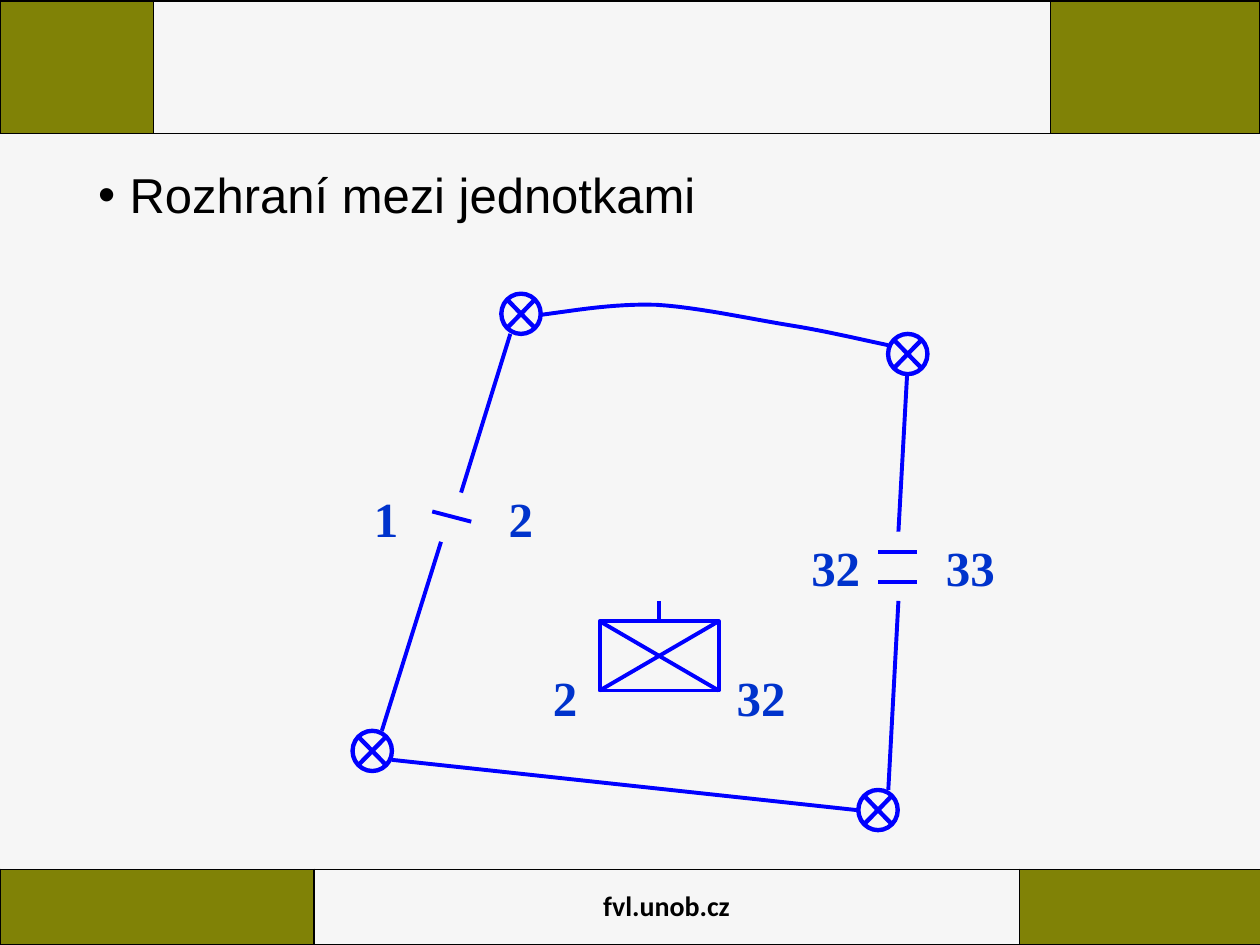
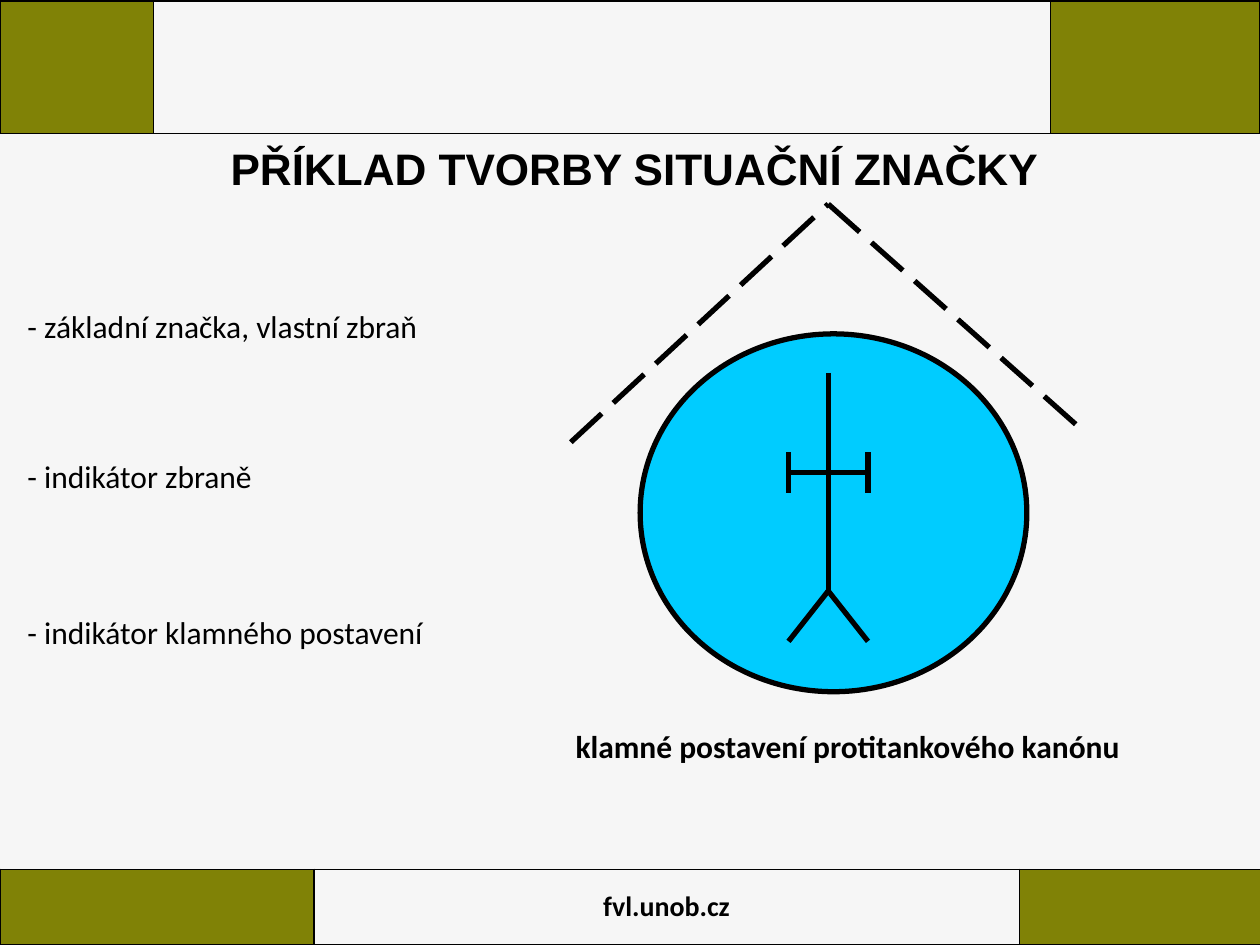
"""Builds two slides on tactical map symbols: unit boundaries and a worked example."""
from lxml.etree import SubElement
from pptx import Presentation
from pptx.dml.color import RGBColor
from pptx.enum.dml import MSO_LINE
from pptx.enum.shapes import MSO_CONNECTOR, MSO_SHAPE
from pptx.enum.text import MSO_ANCHOR as Anchor, PP_ALIGN as Align
from pptx.oxml.ns import qn
from pptx.util import Pt

PAPER = RGBColor(0xF6, 0xF6, 0xF6)
OLIVE = RGBColor(0x80, 0x82, 0x06)
BLACK = RGBColor(0, 0, 0)
BLUE = RGBColor(0, 0, 0xFF)
LABEL_BLUE = RGBColor(0, 0x33, 0xCC)
SKY = RGBColor(0, 0xCC, 0xFF)

HEADER = dict(top=0.7, height=75.6, widths=(87.8, 512.6, 119.6))
FOOTER = dict(top=496.8, height=43.2, widths=(179.3, 403.2, 138.2), caption="fvl.unob.cz")

BOUNDARY_TOPIC = "Rozhraní mezi jednotkami"
JUNCTION_SIZE = (22.5, 23)
JUNCTIONS = [(286.5, 167.8), (507.5, 190.8), (201.5, 417.6), (490.5, 451.4)]
FRONT_START = (308.9, 180)
FRONT_CURVES = [
    ((330.5, 177.1), (351.4, 173.5), (375.1, 174.2)),
    ((398.9, 175.7), (428.4, 182.2), (450.7, 185.8)),
    ((473, 189.4), (490.3, 193.7), (507.6, 197.3)),
]
BOUNDARY_LINES = [
    (263.5, 281.5, 291.6, 190.8), (513.4, 303.8, 518.4, 213.1),
    (223.9, 434.2, 490.3, 463), (218.2, 417.6, 252, 309.6),
    (507.6, 451.4, 513.4, 343.4),
]
ECHELON_MARKS = [
    (247, 292.3, 269.3, 298.1), (501.8, 332.6, 524.2, 332.6),
    (501.8, 315.4, 524.2, 315.4),
]
UNIT_LABELS = [
    ("1\t2", (206.6, 275.8, 118.8, 41), 77),
    ("32\t33", (456.5, 303.8, 136.1, 41), 77),
    ("2\t32", (308.9, 378, 158.4, 41), 105),
]
UNIT_BOX = (342.7, 355, 68, 39.6)
ECHELON_TICK = 11.5

EXAMPLE_TITLE = "PŘÍKLAD TVORBY SITUAČNÍ ZNAČKY "
STEPS = [
    ("- základní značka, vlastní zbraň", 172.1),
    ("- indikátor zbraně", 257.8),
    ("- indikátor klamného postavení", 347),
]
SYMBOL_NAME = " klamné postavení protitankového kanónu"
WEAPON_DISC = (365.8, 190.8, 221, 204.5)
GUN_X, GUN_TOP, GUN_FORK, GUN_FOOT = 473.3, 213.1, 337.7, 366.5
AXLE_Y, AXLE_REACH, WHEEL_REACH = 270, 22.7, 11.5
DECOY_ROOF = [(326.2, 252.7, 473.3, 116.6), (473.3, 116.6, 620.6, 247.7)]


def points(*lengths):
    return [Pt(length) for length in lengths]


def write(frame, text, size=18, font="Calibri", color=BLACK, bold=False,
          align=Align.LEFT, anchor=Anchor.TOP, spacing=None, bullet=None, tab=None):
    frame.word_wrap = True
    frame.vertical_anchor = anchor
    paragraph = frame.paragraphs[0]
    paragraph.text = text
    paragraph.alignment = align
    if spacing:
        paragraph.line_spacing = spacing
    props = paragraph._p.get_or_add_pPr()
    if bullet:
        props.set("marL", str(Pt(18)))
        props.set("indent", str(-Pt(18)))
        SubElement(props, qn("a:buFont"), typeface="Arial")
        SubElement(props, qn("a:buChar"), char=bullet)
    if tab:
        stops = SubElement(props, qn("a:tabLst"))
        SubElement(stops, qn("a:tab"), pos=str(Pt(tab)), algn="l")
    for face in (paragraph.font, paragraph.runs[0].font):
        face.size, face.name, face.bold = Pt(size), font, bold
        face.color.rgb = color


def add_text(slide, text, box, **style):
    write(slide.shapes.add_textbox(*points(*box)).text_frame, text, **style)


def outline(shape, color, weight, fill=None):
    shape.shadow.inherit = False
    if fill is None:
        shape.fill.background()
    else:
        shape.fill.solid()
        shape.fill.fore_color.rgb = fill
    shape.line.color.rgb = color
    shape.line.width = Pt(weight)


def add_outlined(shapes, kind, box, color, weight, fill=None):
    outline(shapes.add_shape(kind, *points(*box)), color, weight, fill)


def add_lines(shapes, segments, color, weight, dash=None):
    for segment in segments:
        stroke = shapes.add_connector(MSO_CONNECTOR.STRAIGHT, *points(*segment))
        stroke.line.color.rgb = color
        stroke.line.width = Pt(weight)
        if dash:
            stroke.line.dash_style = dash
        SubElement(stroke._element.spPr, qn("a:effectLst"))


def border(cell):
    props = cell._tc.get_or_add_tcPr()
    for position, side in enumerate(("lnL", "lnR", "lnT", "lnB")):
        edge = props.makeelement(qn(f"a:{side}"), {"w": str(Pt(1))})
        fill = SubElement(edge, qn("a:solidFill"))
        SubElement(fill, qn("a:srgbClr"), val=str(BLACK))
        props.insert(position, edge)


def add_band(slide, top, height, widths, caption=None):
    band = slide.shapes.add_table(1, 3, *points(0, top, sum(widths), height)).table
    band.first_row = band.horz_banding = False
    for column, width in enumerate(widths):
        band.columns[column].width = Pt(width)
        cell = band.cell(0, column)
        if column == 1:
            cell.fill.background()
        else:
            cell.fill.solid()
            cell.fill.fore_color.rgb = OLIVE
        border(cell)
    if caption:
        middle = band.cell(0, 1)
        write(middle.text_frame, caption, size=16, bold=True, align=Align.CENTER)
        middle.vertical_anchor = Anchor.MIDDLE


def add_slide(deck):
    slide = deck.slides.add_slide(deck.slide_layouts[6])
    slide.background.fill.solid()
    slide.background.fill.fore_color.rgb = PAPER
    add_band(slide, **FOOTER)
    add_band(slide, **HEADER)
    return slide


def trace(start, curves, steps=12):
    """Return points along joined cubic curves."""
    traced = []
    for first, second, end in curves:
        for step in range(1, steps + 1):
            t = step / steps
            u = 1 - t
            weights = (u ** 3, 3 * u * u * t, 3 * u * t * t, t ** 3)
            corners = (start, first, second, end)
            traced.append(tuple(
                Pt(sum(w * corner[axis] for w, corner in zip(weights, corners)))
                for axis in (0, 1)))
        start = end
    return traced


def build_boundaries(deck):
    slide = add_slide(deck)
    shapes = slide.shapes
    add_text(slide, BOUNDARY_TOPIC, (49, 94.3, 612, 419.8), size=28, font="Arial",
             spacing=0.9, bullet="•")
    for corner in JUNCTIONS:
        add_outlined(shapes, MSO_SHAPE.FLOWCHART_SUMMING_JUNCTION,
                     corner + JUNCTION_SIZE, BLUE, 2.5)
    front = shapes.build_freeform(*points(*FRONT_START))
    front.add_line_segments(trace(FRONT_START, FRONT_CURVES), close=False)
    outline(front.convert_to_shape(), BLUE, 2.25)
    add_lines(shapes, BOUNDARY_LINES + ECHELON_MARKS, BLUE, 2.25)

    left, top, width, height = UNIT_BOX
    right, bottom, middle = left + width, top + height, left + width / 2
    unit = shapes.add_group_shape().shapes
    add_outlined(unit, MSO_SHAPE.RECTANGLE, UNIT_BOX, BLUE, 2.25)
    add_lines(unit, [(left, top, right, bottom), (left, bottom, right, top),
                     (middle, top, middle, top - ECHELON_TICK)], BLUE, 2.25)
    for label, box, tab in UNIT_LABELS:
        add_text(slide, label, box, size=28, font="Times New Roman",
                 color=LABEL_BLUE, bold=True, tab=tab)


def build_example(deck):
    slide = add_slide(deck)
    shapes = slide.shapes
    add_text(slide, EXAMPLE_TITLE, (59.8, 79.9, 612, 36), size=25.2, font="Arial",
             bold=True, align=Align.CENTER, anchor=Anchor.MIDDLE, spacing=0.9)
    for step, top in STEPS:
        add_text(slide, step, (8.6, top, 283.7, 36))
    add_outlined(shapes, MSO_SHAPE.OVAL, WEAPON_DISC, BLACK, 3, SKY)

    sides = (GUN_X - AXLE_REACH, GUN_X + AXLE_REACH)
    gun = [(GUN_X, GUN_TOP, GUN_X, GUN_FORK), (sides[0], AXLE_Y, sides[1], AXLE_Y)]
    for side in sides:
        gun.append((GUN_X, GUN_FORK, side, GUN_FOOT))
        gun.append((side, AXLE_Y - WHEEL_REACH, side, AXLE_Y + WHEEL_REACH))
    add_lines(shapes.add_group_shape().shapes, gun, BLACK, 3)
    add_lines(shapes.add_group_shape().shapes, DECOY_ROOF, BLACK, 3, MSO_LINE.LONG_DASH)
    add_text(slide, SYMBOL_NAME, (292.3, 411.8, 380.2, 64.8), bold=True,
             align=Align.CENTER)


def main():
    deck = Presentation()
    deck.slide_width, deck.slide_height = points(720, 540)
    build_boundaries(deck)
    build_example(deck)
    deck.save("out.pptx")


if __name__ == "__main__":
    main()
